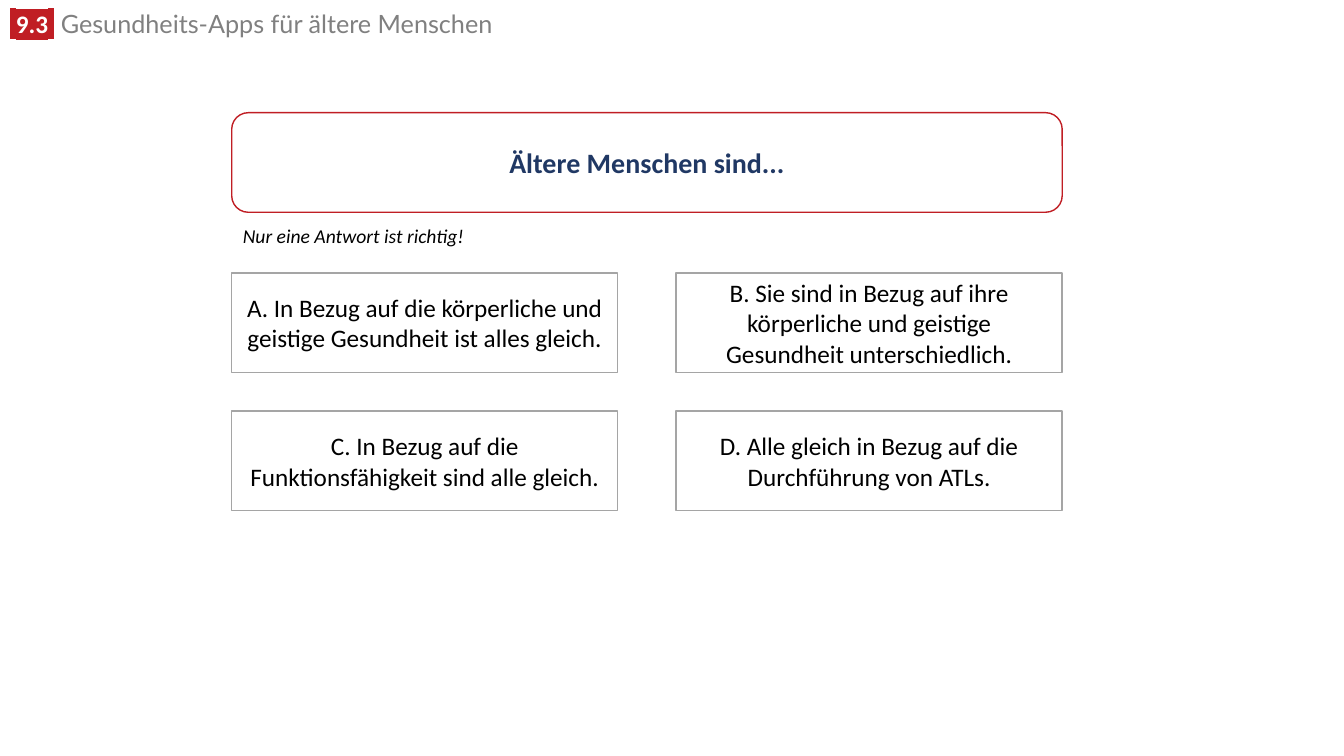
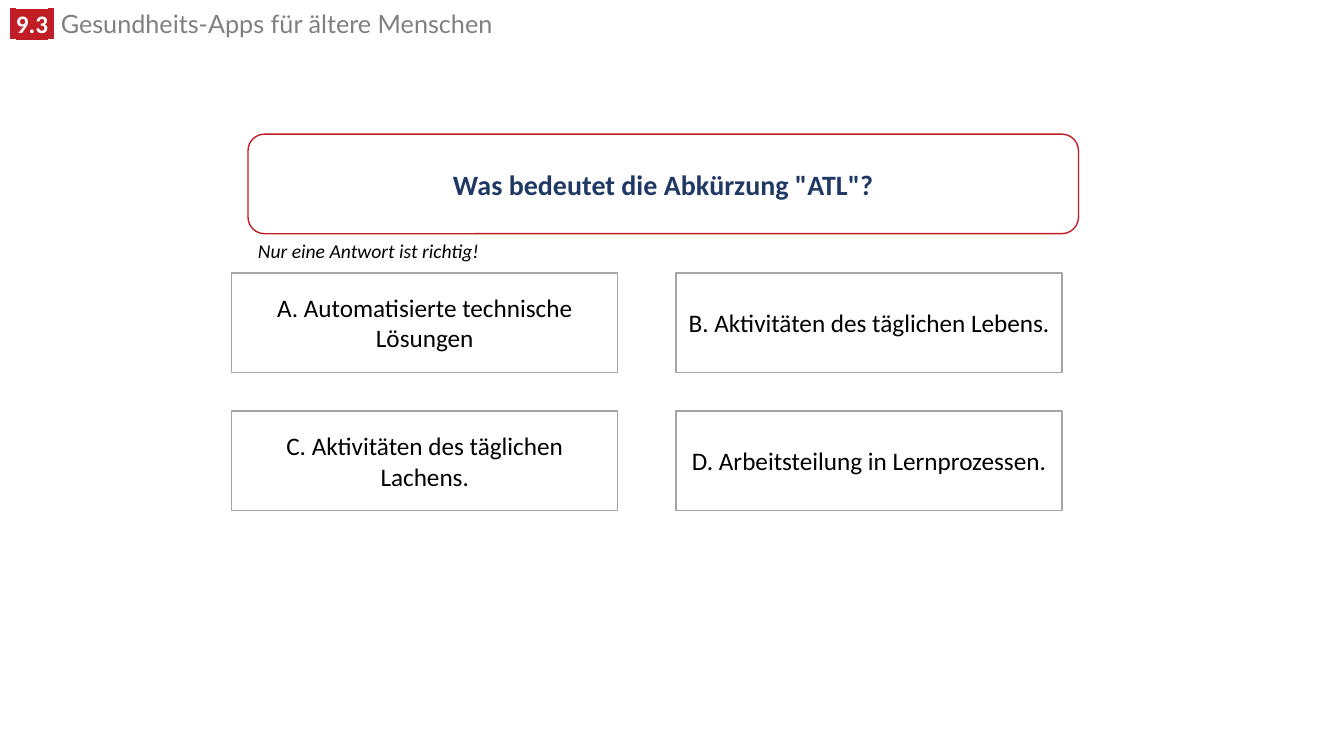
"""Build two quiz slides on health apps for older people."""
from lxml import etree
from pptx import Presentation, util as u
from pptx.dml.color import RGBColor
from pptx.enum import shapes, text
from pptx.oxml.ns import qn

HUES = {"red": "C01E24", "navy": "203864", "gray": "808080",
        "edge": "A5A5A5", "black": "000000", "white": "FFFFFF"}
LEFT, WIDE, HIGH = 5.84, 20.93, 2.51
CELL, TOP, STEP = 9.73, 6.88, 3.48

QUIZ = [
    {"ask": "Ältere Menschen sind...", "spot": (LEFT, 2.84), "hint": (5.87, 5.51),
     "picks": ["A. In Bezug auf die körperliche und geistige Gesundheit ist alles gleich.",
               "B. Sie sind in Bezug auf ihre körperliche und geistige Gesundheit unterschiedlich.",
               "C. In Bezug auf die Funktionsfähigkeit sind alle gleich.",
               "D. Alle gleich in Bezug auf die Durchführung von ATLs."]},
    {"ask": "Was bedeutet die Abkürzung \"ATL\"?", "spot": (6.25, 3.38), "hint": (6.25, 5.89),
     "picks": ["A. Automatisierte technische Lösungen",
               "B. Aktivitäten des täglichen Lebens.",
               "C. Aktivitäten des täglichen Lachens.",
               "D. Arbeitsteilung in Lernprozessen."]},
]


def hue(name):
    return RGBColor.from_string(HUES[name])


def put(para, words, size=18, face="Calibri", tint="black",
        bold=False, slant=False, mark=None):
    run = para.add_run()
    run.text = words
    font = run.font
    font.size, font.name = u.Pt(size), face
    font.bold, font.italic = bold, slant
    font.color.rgb = hue(tint)
    if mark:
        glow = etree.Element(qn("a:highlight"))
        etree.SubElement(glow, qn("a:srgbClr"), val=HUES[mark])
        run.font._element.find(qn("a:solidFill")).addnext(glow)


class Deck:
    def __init__(self):
        self.show = Presentation()
        self.show.slide_width = u.Cm(33.87)
        self.show.slide_height = u.Cm(19.05)
        self.slide = None

    def page(self):
        self.slide = self.show.slides.add_slide(self.show.slide_layouts[6])
        self.title()

    def label(self, x, y, w, h, wrap=True):
        box = self.slide.shapes.add_textbox(*map(u.Cm, (x, y, w, h)))
        box.text_frame.word_wrap = wrap
        return box.text_frame.paragraphs[0]

    def title(self):
        para = self.label(0, 0.23, 24.18, 0.89)
        para.line_spacing = 0.8
        for words, face in ((" ", "Lato"), ("9.3", "Calibri"), (" ", "Lato")):
            put(para, words, face=face, tint="white", bold=True, mark="red")
        put(para, " Gesundheits-Apps für ältere Menschen", face="Lato", tint="gray")

    def panel(self, kind, x, y, w, edge, words, **style):
        box = self.slide.shapes.add_shape(kind, *map(u.Cm, (x, y, w, HIGH)))
        box.shadow.inherit = False
        box.fill.solid()
        box.fill.fore_color.rgb = hue("white")
        box.line.color.rgb = hue(edge)
        box.line.width = u.Pt(1)
        frame = box.text_frame
        frame.word_wrap = True
        frame.vertical_anchor = text.MSO_ANCHOR.MIDDLE
        para = frame.paragraphs[0]
        para.alignment = text.PP_ALIGN.CENTER
        put(para, words, **style)

    def ask(self, x, y, words):
        self.panel(shapes.MSO_SHAPE.ROUNDED_RECTANGLE, x, y, WIDE, "red", words,
                   size=20, tint="navy", bold=True)

    def hint(self, x, y):
        para = self.label(x, y, 6.15, 0.86, wrap=False)
        put(para, "Nur eine Antwort ist richtig!", size=14, slant=True)

    def picks(self, items):
        for i, words in enumerate(items):
            row, col = divmod(i, 2)
            self.panel(shapes.MSO_SHAPE.RECTANGLE, LEFT + col * (WIDE - CELL),
                       TOP + row * STEP, CELL, "edge", words)


def main():
    deck = Deck()
    for quiz in QUIZ:
        deck.page()
        deck.ask(*quiz["spot"], quiz["ask"])
        deck.hint(*quiz["hint"])
        deck.picks(quiz["picks"])
    deck.show.save("out.pptx")


if __name__ == "__main__":
    main()
